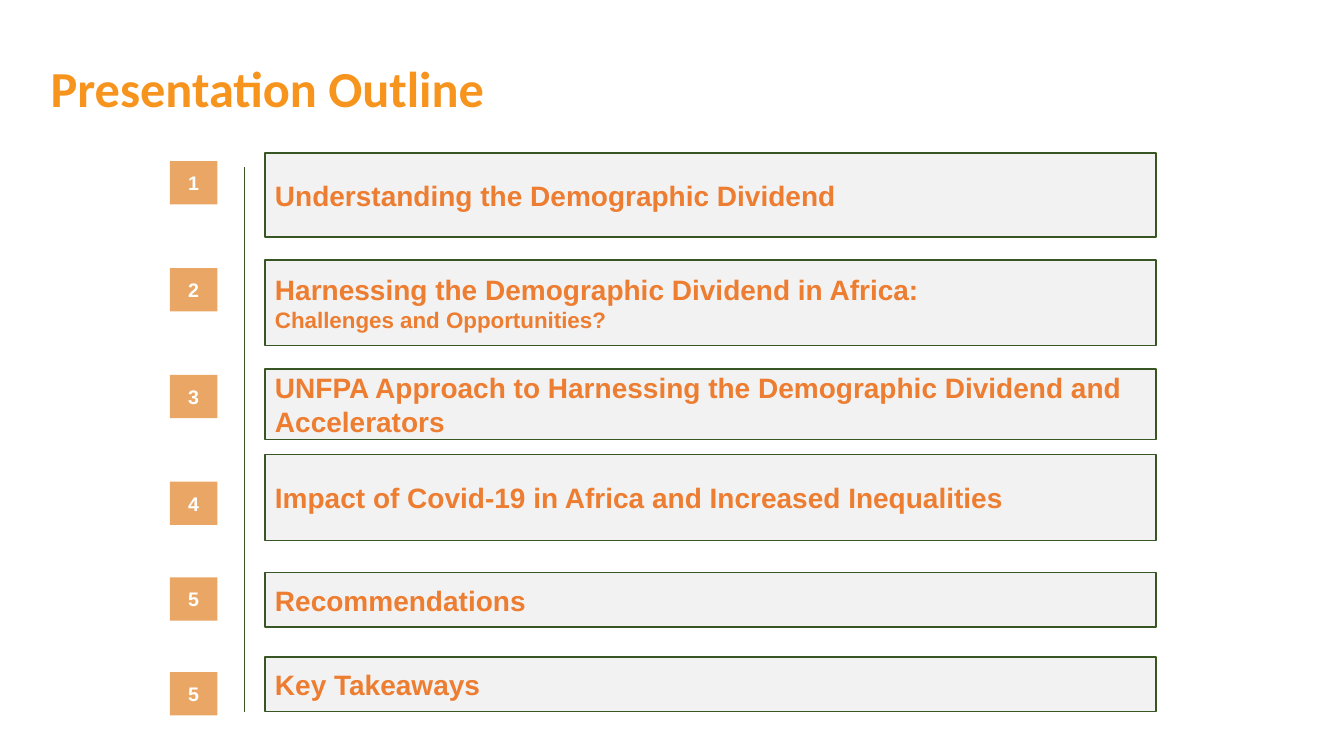
"""Build the presentation outline slide with numbered agenda boxes."""
import pptx
import pptx.dml.color
import pptx.enum.shapes
import pptx.enum.text
import pptx.oxml
import pptx.util

Cm = pptx.util.Cm
Pt = pptx.util.Pt
RGBColor = pptx.dml.color.RGBColor
ALIGN = pptx.enum.text.PP_ALIGN

AMBER = RGBColor(0xF7, 0x94, 0x1E)
ORANGE = RGBColor(0xED, 0x7D, 0x31)
SAND = RGBColor(0xEA, 0xA6, 0x65)
GREEN = RGBColor(0x38, 0x56, 0x23)
PALE = RGBColor(0xF2, 0xF2, 0xF2)
WHITE = RGBColor(0xFF, 0xFF, 0xFF)

AGENDA = [
    ("1", 4.06, 3.86, 2.11, [("Understanding the Demographic Dividend", 20)]),
    ("2", 6.76, 6.55, 2.16, [("Harnessing the Demographic Dividend in Africa:", 20),
                             ("Challenges and Opportunities?", 16)]),
    ("3", 9.45, 9.3, 1.78, [("UNFPA Approach to Harnessing the Demographic Dividend and Accelerators", 20)]),
    ("4", 12.14, 11.46, 2.16, [("Impact of Covid-19 in Africa and Increased Inequalities", 20)]),
    ("5", 14.55, 14.43, 1.37, [("Recommendations", 20)]),
    ("5", 16.94, 16.56, 1.37, [("Key Takeaways", 20)]),
]


def write(paragraph, text, size=20, color=ORANGE, font="Arial", align=ALIGN.LEFT):
    paragraph.alignment = align
    run = paragraph.add_run()
    run.text = text
    run.font.name = font
    run.font.size = Pt(size)
    run.font.bold = True
    run.font.color.rgb = color


class OutlineSlide:
    def __init__(self, deck):
        self.slide = deck.slides.add_slide(deck.slide_layouts[5])

    def heading(self, text):
        title = self.slide.shapes.title
        title.left, title.top, title.width, title.height = Cm(1.02), Cm(0.97), Cm(24.94), Cm(2.44)
        title.text_frame.auto_size = pptx.enum.text.MSO_AUTO_SIZE.NONE
        title.text_frame.vertical_anchor = pptx.enum.text.MSO_ANCHOR.MIDDLE
        write(title.text_frame.paragraphs[0], text, size=36, color=AMBER, font="Calibri")

    def divider(self, x, top, bottom):
        rule = self.slide.shapes.add_connector(
            pptx.enum.shapes.MSO_CONNECTOR.STRAIGHT, Cm(x), Cm(top), Cm(x), Cm(bottom))
        rule.line.color.rgb = GREEN
        rule.line.width = Pt(0.75)
        rule._element.spPr.append(pptx.oxml.parse_xml(
            '<a:effectLst xmlns:a="http://schemas.openxmlformats.org/drawingml/2006/main"/>'))

    def rectangle(self, left, top, width, height, fill):
        panel = self.slide.shapes.add_shape(
            pptx.enum.shapes.MSO_SHAPE.RECTANGLE, Cm(left), Cm(top), Cm(width), Cm(height))
        panel.shadow.inherit = False
        panel.fill.solid()
        panel.fill.fore_color.rgb = fill
        panel.text_frame.word_wrap = True
        panel.text_frame.vertical_anchor = pptx.enum.text.MSO_ANCHOR.MIDDLE
        return panel

    def badge(self, number, top):
        marker = self.rectangle(4.28, top, 1.2, 1.09, SAND)
        marker.line.fill.background()
        write(marker.text_frame.paragraphs[0], number, size=14, color=WHITE, align=ALIGN.CENTER)

    def topic(self, lines, top, height):
        box = self.rectangle(6.68, top, 22.45, height, PALE)
        box.line.color.rgb = GREEN
        box.line.width = Pt(1)
        for index, (text, size) in enumerate(lines):
            frame = box.text_frame
            write(frame.add_paragraph() if index else frame.paragraphs[0], text, size=size)


def main():
    deck = pptx.Presentation()
    deck.slide_width, deck.slide_height = Cm(33.87), Cm(19.05)
    outline = OutlineSlide(deck)
    outline.heading("Presentation Outline")
    outline.divider(6.16, 4.22, 17.93)
    for number, badge_top, topic_top, topic_height, lines in AGENDA:
        outline.badge(number, badge_top)
        outline.topic(lines, topic_top, topic_height)
    deck.save("out.pptx")


if __name__ == "__main__":
    main()
